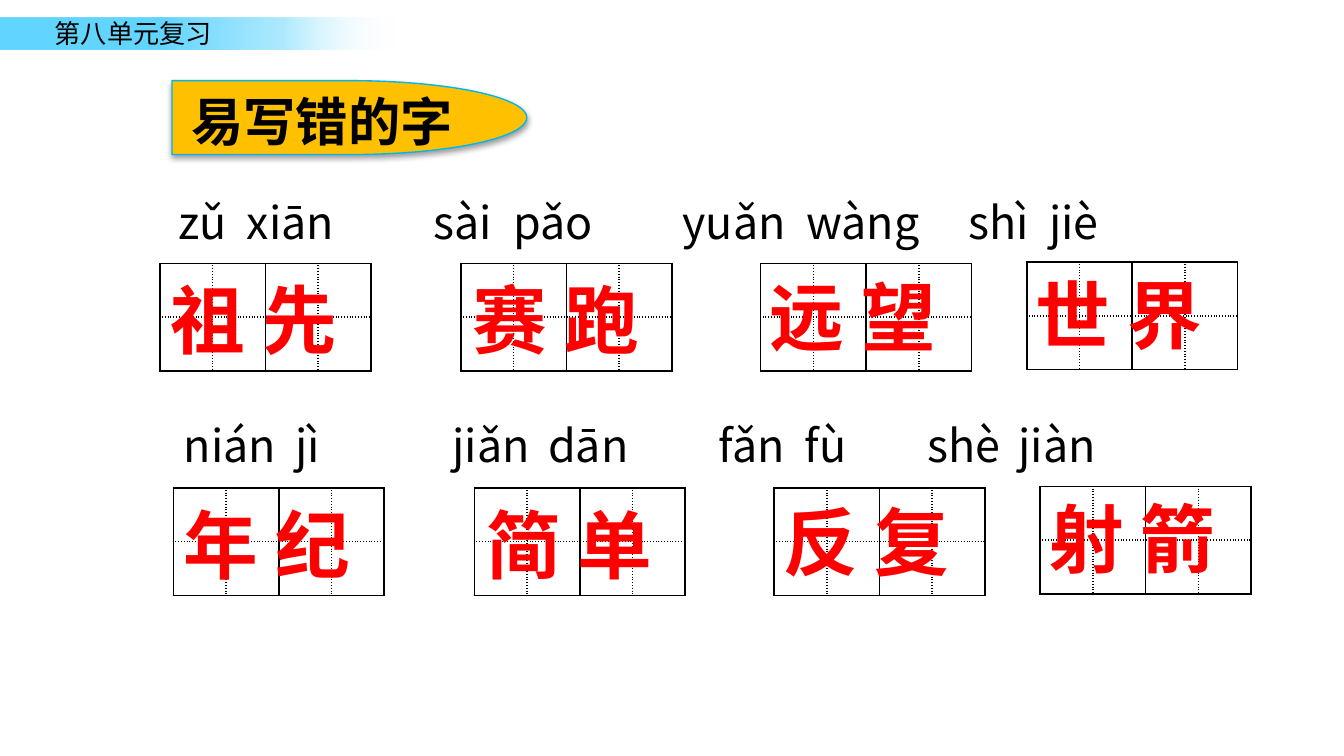
"""Build a review slide of easily miswritten words in practice grids with pinyin."""
import lxml.etree
import pptx
import pptx.dml.color
import pptx.enum.shapes
import pptx.enum.text
import pptx.oxml
import pptx.oxml.ns
import pptx.util

Inches = pptx.util.Inches
Pt = pptx.util.Pt
SHAPES = pptx.enum.shapes.MSO_SHAPE

THEME = {
    "hanzi": "Noto Sans CJK SC", "latin": "Noto Sans CJK JP",
    "ink": "000000", "answer": "FF0000", "badge": "FFC000", "badge_line": "00B5F4",
    "header_size": 14, "title_size": 28, "word_size": 40, "pinyin_size": 24,
    "band": [(40, "63D6FF", 100), (70, "97E4FF", 76), (97, "FFFFFF", 0)],
}
HEADER = "第八单元复习"
TITLE = "易写错的字"
ROWS = [
    {"shift": (0, 0), "words": ["祖 先", "赛 跑", "远 望", "世 界"],
     "pinyin": ["zǔ", "xiān", "sài", "pǎo", "yuǎn", "wàng", "shì", "jiè"],
     "tabs": [0.51, 1.9, 2.49, 3.75, 4.67, 5.88, 6.48], "box": (1.23, 1.4, 8.33, 0.5)},
    {"shift": (0.1, 1.67), "words": ["年 纪", "简 单", "反 复", "射 箭"],
     "pinyin": ["nián", "jì", "jiǎn", "dān", "fǎn", "fù", "shè", "jiàn"],
     "tabs": [0.83, 2.0, 2.71, 3.98, 4.62, 5.53, 6.21], "box": (1.27, 3.06, 8.14, 0.5)},
]
GRID_SPOTS = [(1.19, 1.96), (3.43, 1.96), (5.66, 1.96), (7.64, 1.95)]
WORD_SPOTS = [(1.17, 1.99), (3.42, 1.99), (5.63, 1.97), (7.61, 1.95)]
GRID_SIZE = (1.57, 0.8)
WORD_SIZE = (1.61, 0.77)
NS = pptx.oxml.ns.nsdecls("a")


def color(name):
    return pptx.dml.color.RGBColor.from_string(THEME[name])


def lengths(values):
    return [Inches(value) for value in values]


def add_text(shapes, text, place, role, face="hanzi", ink="ink", bold=False,
             wrap=True, tabs=()):
    box = shapes.add_textbox(*lengths(place))
    frame = box.text_frame
    frame.word_wrap = wrap
    frame.auto_size = pptx.enum.text.MSO_AUTO_SIZE.SHAPE_TO_FIT_TEXT
    para = frame.paragraphs[0]
    para.text = text
    properties = para._p.get_or_add_pPr()
    if tabs:
        stops = lxml.etree.SubElement(properties, pptx.oxml.ns.qn("a:tabLst"))
        for stop in tabs:
            lxml.etree.SubElement(stops, pptx.oxml.ns.qn("a:tab"),
                                  pos=str(Inches(stop)), algn="l")
    font = para.font
    font.size = Pt(THEME[role])
    font.bold = bold
    font.color.rgb = color(ink)
    font.name = THEME[face]
    defaults = properties.find(pptx.oxml.ns.qn("a:defRPr"))
    lxml.etree.SubElement(defaults, pptx.oxml.ns.qn("a:ea"), typeface=THEME[face])
    return box


def add_header(page):
    band = page.shapes.add_shape(SHAPES.RECTANGLE, *lengths((0, 0.13, 3.03, 0.24)))
    band.shadow.inherit = False
    band.line.fill.background()
    stops = "".join(
        f'<a:gs pos="{pos * 1000}"><a:srgbClr val="{shade}">'
        f'<a:alpha val="{alpha * 1000}"/></a:srgbClr></a:gs>'
        for pos, shade, alpha in THEME["band"])
    gradient = pptx.oxml.parse_xml(
        f'<a:gradFill {NS} rotWithShape="1"><a:gsLst>{stops}</a:gsLst>'
        '<a:lin ang="0" scaled="0"/></a:gradFill>')
    band._element.spPr.find(pptx.oxml.ns.qn("a:prstGeom")).addnext(gradient)
    add_text(page.shapes, HEADER, (0.31, 0.08, 1.37, 0.34), "header_size", wrap=False)


def add_title(page):
    group = page.shapes.add_group_shape()
    badge = group.shapes.add_shape(SHAPES.FLOWCHART_DELAY, *lengths((1.28, 0.6, 2.64, 0.55)))
    badge.shadow.inherit = False
    badge.fill.solid()
    badge.fill.fore_color.rgb = color("badge")
    badge.line.color.rgb = color("badge_line")
    badge.line.width = Pt(0.75)
    effects = badge._element.spPr.find(pptx.oxml.ns.qn("a:effectLst"))
    effects.append(pptx.oxml.parse_xml(
        f'<a:outerShdw {NS} blurRad="{Pt(3.1)}" dist="{Pt(1.6)}" dir="5400000" '
        f'rotWithShape="0"><a:srgbClr val="{THEME["ink"]}"><a:alpha val="38000"/>'
        '</a:srgbClr></a:outerShdw>'))
    box = add_text(group.shapes, TITLE, (1.17, 0.62, 2.45, 0.55), "title_size", bold=True)
    frame = box.text_frame
    frame.margin_left = frame.margin_right = Inches(0.07)
    frame.margin_top = frame.margin_bottom = Inches(0.04)
    frame.paragraphs[0].alignment = pptx.enum.text.PP_ALIGN.CENTER


def add_grid(page, place):
    table = page.shapes.add_table(2, 4, *lengths(place)).table
    table.first_row = table.horz_banding = False
    for row in range(2):
        for column in range(4):
            cell = table.cell(row, column)
            cell.text_frame.paragraphs[0].font.size = Pt(12)
            solid = {"L": column % 2 == 0, "R": column % 2 == 1,
                     "T": row == 0, "B": row == 1}
            properties = cell._tc.get_or_add_tcPr()
            for side, is_solid in solid.items():
                dash = "solid" if is_solid else "sysDot"
                properties.append(pptx.oxml.parse_xml(
                    f'<a:ln{side} {NS} w="{Pt(1)}"><a:solidFill>'
                    f'<a:srgbClr val="{THEME["ink"]}"/></a:solidFill>'
                    f'<a:prstDash val="{dash}"/></a:ln{side}>'))
            cell.fill.background()


def main():
    deck = pptx.Presentation()
    deck.slide_width = Inches(10)
    deck.slide_height = deck.slide_width * 9 // 16
    page = deck.slides.add_slide(deck.slide_layouts[6])
    add_header(page)
    add_title(page)
    for row in ROWS:
        right, down = row["shift"]
        for word, grid, spot in zip(row["words"], GRID_SPOTS, WORD_SPOTS):
            add_grid(page, (grid[0] + right, grid[1] + down, *GRID_SIZE))
            add_text(page.shapes, word, (spot[0] + right, spot[1] + down, *WORD_SIZE),
                     "word_size", ink="answer", bold=True)
        add_text(page.shapes, "\t".join(row["pinyin"]), row["box"], "pinyin_size",
                 face="latin", tabs=row["tabs"])
    deck.save("out.pptx")


if __name__ == "__main__":
    main()
